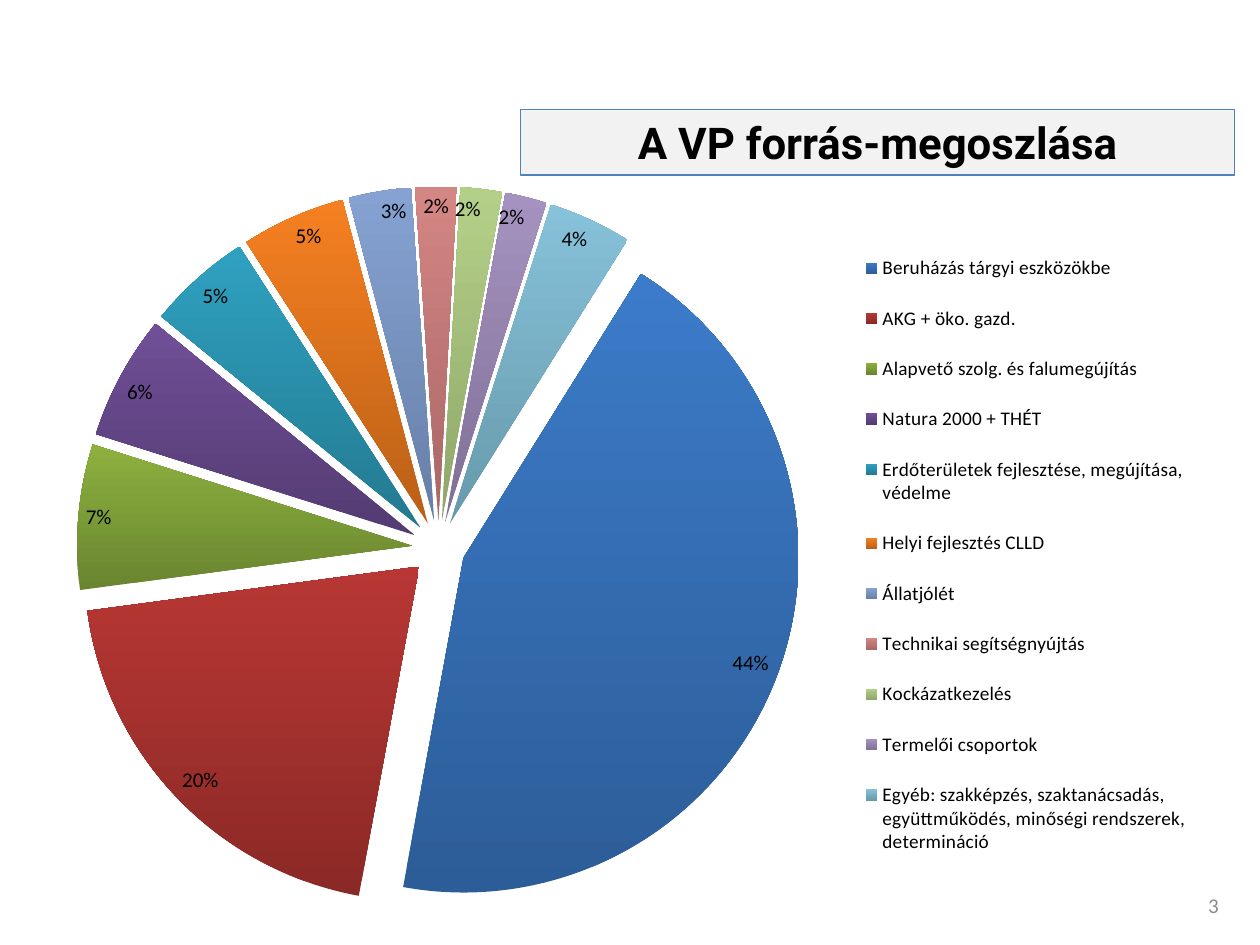
from lxml import etree
from pptx import Presentation
from pptx.chart.data import CategoryChartData as ChartData
from pptx.dml.color import RGBColor
from pptx.enum.chart import XL_CHART_TYPE as Kind, XL_LABEL_POSITION as Spot, XL_LEGEND_POSITION as Side
from pptx.enum.text import MSO_ANCHOR as Anchor, MSO_AUTO_SIZE as Fit, PP_ALIGN as Align
from pptx.oxml.ns import qn
from pptx.util import Cm, Pt

# Category, share, and the top and bottom colour of its slice
SHARES = [
    ("Beruházás tárgyi eszközökbe", 44, "3C7BC9", "2C5D98"),
    ("AKG + öko. gazd.", 20, "B83734", "8B2926"),
    ("Alapvető szolg. és falumegújítás", 7, "8DB03F", "69852F"),
    ("Natura 2000 + THÉT", 6, "704F97", "543B72"),
    ("Erdőterületek fejlesztése, megújítása, védelme", 5, "2FA1C0", "237A90"),
    ("Helyi fejlesztés CLLD", 5, "F58021", "BA6017"),
    ("Állatjólét", 3, "86A2D2", "677FA8"),
    ("Technikai segítségnyújtás", 2, "D48684", "A86766"),
    ("Kockázatkezelés", 2, "B4D088", "8EA669"),
    ("Termelői csoportok", 2, "A592C0", "7F7096"),
    ("Egyéb: szakképzés, szaktanácsadás, együttműködés, minőségi rendszerek, determináció",
     4, "86C2DA", "6799AB"),
]


def paint(color, code):
    color.rgb = RGBColor.from_string(code)


def style(font, code, **values):
    for name, value in values.items():
        setattr(font, name, value)
    paint(font.color, code)


def node(tag, **values):
    """Make a chart element whose children each hold one value."""
    item = etree.Element(qn(tag))
    for name, value in values.items():
        etree.SubElement(item, qn(f"c:{name}")).set("val", str(value))
    return item


def layout(**values):
    item = node("c:layout")
    item.append(node("c:manualLayout", **values))
    return item


class Deck:
    face, head, ink = "Calibri", "Roboto", "000000"

    def __init__(self):
        self.prs = Presentation()
        self.prs.slide_width, self.prs.slide_height = Cm(25.4), Cm(19.05)
        self.slide = self.prs.slides.add_slide(self.prs.slide_layouts[5])

    def title(self, text, left, top, width, height):
        box = self.slide.shapes.title
        place = dict(left=left, top=top, width=width, height=height)
        for name, value in place.items():
            setattr(box, name, Cm(value))
        box.fill.solid()
        paint(box.fill.fore_color, "F2F2F2")
        paint(box.line.color, "4F81BD")
        box.line.width = Pt(0.75)
        frame = box.text_frame
        frame.text = text
        frame.auto_size, frame.vertical_anchor = Fit.NONE, Anchor.MIDDLE
        para = frame.paragraphs[0]
        para.alignment = Align.CENTER
        style(para.runs[0].font, self.ink, name=self.head, size=Pt(25), bold=True)

    def number(self, text, *place):
        frame = self.slide.shapes.add_textbox(*map(Cm, place)).text_frame
        frame.text, frame.word_wrap = text, True
        frame.vertical_anchor = Anchor.MIDDLE
        para = frame.paragraphs[0]
        para.alignment = Align.RIGHT
        style(para.runs[0].font, "8C8C8C", name=self.face, size=Pt(12))

    def pie(self, rows, *place):
        data = ChartData()
        data.categories = [row[0] for row in rows]
        data.add_series("Series 1", [row[1] for row in rows])
        chart = self.slide.shapes.add_chart(Kind.PIE, *map(Cm, place), data).chart
        chart.has_title = False
        style(chart.font, self.ink, name=self.face, size=Pt(18))
        plot = chart.plots[0]
        plot.vary_by_categories = True
        series = plot.series[0]

        # Slices shade from bottom to top
        for i, (_, _, top, base) in enumerate(rows):
            fill = series.points[i].format.fill
            fill.gradient()
            fill.gradient_angle = 90
            for stop, code in zip(fill.gradient_stops, (base, top)):
                paint(stop.color, code)

        # Percent labels
        labels = series.data_labels
        show = dict(show_percentage=True, show_value=False, number_format="0%",
                    number_format_is_linked=False, position=Spot.INSIDE_END)
        for name, value in show.items():
            setattr(labels, name, value)
        style(labels.font, self.ink, name=self.face, size=Pt(12))

        # Legend
        chart.has_legend = True
        legend = chart.legend
        legend.position, legend.include_in_layout = Side.RIGHT, False
        style(legend.font, self.ink, name=self.face, size=Pt(11))

        # Exploded slices, turned start, fixed plot and legend areas
        root = chart.element
        burst = node("c:explosion")
        burst.set("val", "8")
        root.find(".//" + qn("c:dPt")).addprevious(burst)
        pie = root.find(".//" + qn("c:pieChart"))
        for old in pie.findall(qn("c:firstSliceAng")):
            pie.remove(old)
        turn = node("c:firstSliceAng")
        turn.set("val", "32")
        pie.append(turn)
        area = pie.getparent()
        key = root.find(".//" + qn("c:legend"))
        for part in (area, key):
            for old in part.findall(qn("c:layout")):
                part.remove(old)
        area.insert(0, layout(layoutTarget="inner", xMode="edge", yMode="edge",
                              x=0.03, y=0, w=0.64, h=1))
        key.find(qn("c:legendPos")).addnext(
            layout(xMode="edge", yMode="edge", x=0.69, y=0.06, w=0.29, h=0.9))


def main():
    deck = Deck()
    deck.number("3", 23.5, 17.73, 1.32, 1.02)
    deck.pie(SHARES, 0.3, 3.76, 24.41, 14.58)
    deck.title("A VP forrás-megoszlása", 10.49, 2.21, 14.4, 1.32)
    deck.prs.save("out.pptx")


if __name__ == "__main__":
    main()
